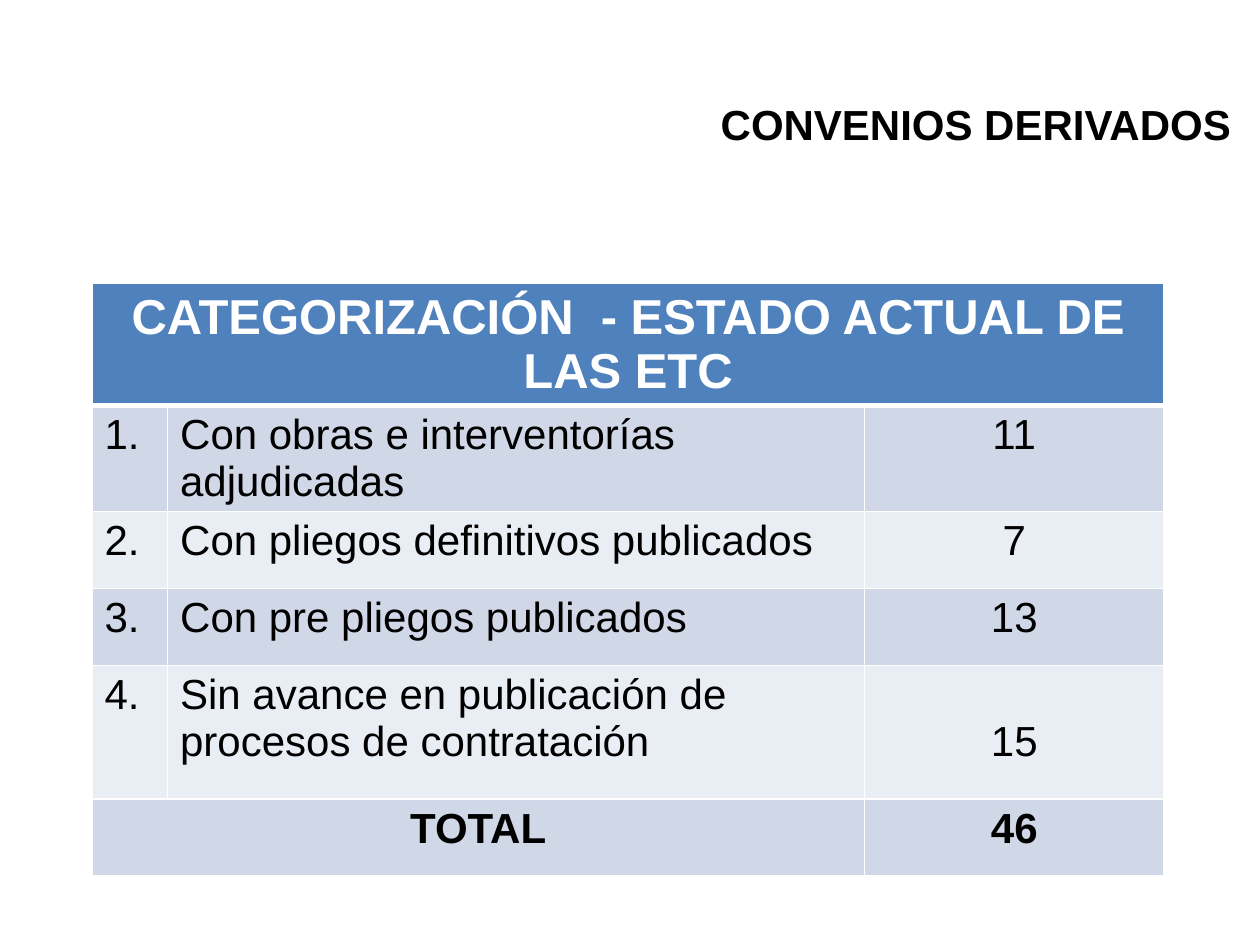
from lxml.etree import SubElement
from pptx import Presentation
from pptx.dml.color import RGBColor
from pptx.enum.text import MSO_ANCHOR, PP_ALIGN
from pptx.oxml.ns import qn
from pptx.util import Inches, Pt

BLACK = RGBColor(0x00, 0x00, 0x00)
WHITE = RGBColor(0xFF, 0xFF, 0xFF)
BLUE = RGBColor(0x4F, 0x81, 0xBD)
BANDS = [RGBColor(0xE9, 0xED, 0xF4), RGBColor(0xD0, 0xD8, 0xE8)]

ROWS = [
    ["CATEGORIZACIÓN  - ESTADO ACTUAL DE LAS ETC", "", ""],
    ["1.", "Con obras e interventorías adjudicadas", "11"],
    ["2.", "Con pliegos definitivos publicados", "7"],
    ["3.", "Con pre pliegos publicados", "13"],
    ["4.", "Sin avance en publicación de procesos de contratación", "15"],
    ["TOTAL", "", "46"],
]
COL_WIDTHS = [0.6, 5.53, 2.38]
ROW_HEIGHTS = [0.66, 0.61, 0.61, 0.61, 1.06, 0.61]
LAST = len(ROWS) - 1


def add_border(cell, side, width):
    ln = SubElement(cell._tc.get_or_add_tcPr(), qn(f"a:ln{side}"), w=str(Pt(width)))
    fill = SubElement(ln, qn("a:solidFill"))
    SubElement(fill, qn("a:srgbClr"), val=str(WHITE))


def format_text(p, size, color, bold, align):
    p.alignment = align
    for r in p.runs:
        r.font.name = "Arial"
        r.font.size = Pt(size)
        r.font.bold = bold
        r.font.color.rgb = color


prs = Presentation()
prs.slide_width, prs.slide_height = Inches(10), Inches(7.5)
s = prs.slides.add_slide(prs.slide_layouts[5])

title = s.shapes.title
title.left, title.top = Inches(4.76), Inches(0.52)
title.width, title.height = Inches(5.11), Inches(0.71)
tf = title.text_frame
tf.text = "CONVENIOS DERIVADOS"
tf.vertical_anchor = MSO_ANCHOR.BOTTOM
format_text(tf.paragraphs[0], 24, BLACK, True, PP_ALIGN.RIGHT)

table = s.shapes.add_table(
    len(ROWS), len(COL_WIDTHS), Inches(0.73), Inches(2.25),
    Inches(sum(COL_WIDTHS)), Inches(sum(ROW_HEIGHTS)),
).table
for column, width in zip(table.columns, COL_WIDTHS):
    column.width = Inches(width)
for row, height in zip(table.rows, ROW_HEIGHTS):
    row.height = Inches(height)
table.cell(0, 0).merge(table.cell(0, 2))
table.cell(LAST, 0).merge(table.cell(LAST, 1))

for i, texts in enumerate(ROWS):
    header = i == 0
    strong = i in (0, LAST)
    for j, text in enumerate(texts):
        cell = table.cell(i, j)
        add_border(cell, "L", 1)
        add_border(cell, "R", 1)
        add_border(cell, "T", 3 if i == 1 else 1)
        add_border(cell, "B", 3 if header else 1)
        cell.fill.solid()
        cell.fill.fore_color.rgb = BLUE if header else BANDS[i % 2]
        if text:
            cell.text_frame.text = text
            centred = strong or j == 2
            format_text(cell.text_frame.paragraphs[0], 28 if header else 24,
                        WHITE if header else BLACK, strong,
                        PP_ALIGN.CENTER if centred else PP_ALIGN.LEFT)

# The last count sits one line lower, beside the second line of its label
table.cell(4, 2).margin_top = Inches(0.42)

prs.save("out.pptx")
